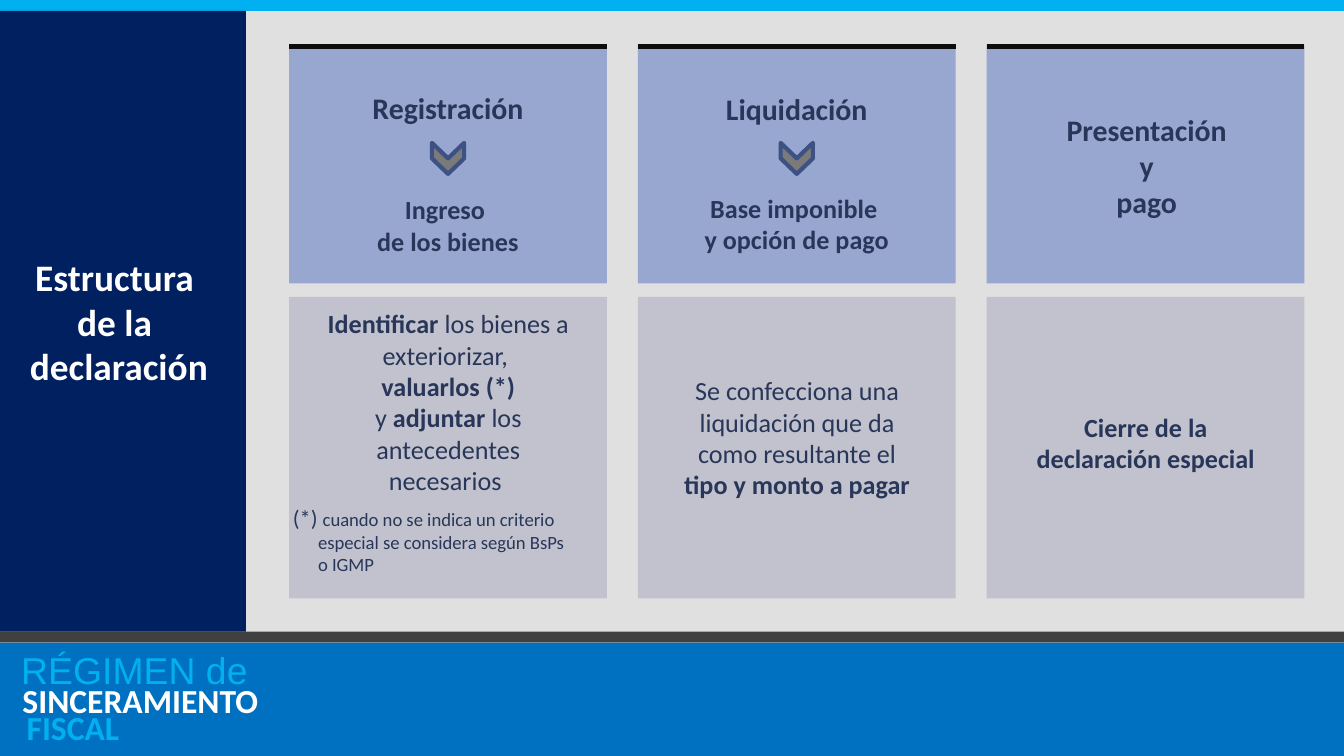
from pptx import Presentation
from pptx.dml.color import RGBColor
from pptx.enum import shapes, text
from pptx.oxml.ns import qn
from pptx.util import Pt
from lxml import etree

WHITE = RGBColor(0xFF, 0xFF, 0xFF)
GRAY = RGBColor(0xD9, 0xD9, 0xD9)
DARK_GRAY = RGBColor(0x40, 0x40, 0x40)
BLUE = RGBColor(0x00, 0x70, 0xC0)
SKY = RGBColor(0x00, 0xB0, 0xF0)
NAVY = RGBColor(0x00, 0x20, 0x60)
HEADER_FILL = RGBColor(0x97, 0xA7, 0xD0)
BODY_FILL = RGBColor(0xC1, 0xC2, 0xCD)
INK = RGBColor(0x28, 0x36, 0x59)
RULE = RGBColor(0x0D, 0x0D, 0x0D)
CHEVRON_FILL = RGBColor(0x7A, 0x7A, 0x7A)
CHEVRON_LINE = RGBColor(0x3D, 0x51, 0x85)

WIDTH, HEIGHT = 720, 405
COLUMN_LEFT, COLUMN_TOP, COLUMN_PITCH = 154.9, 24.2, 186.85
COLUMN_WIDTH, HEADER_HEIGHT = 170.2, 127.6
BODY_OFFSET, BODY_HEIGHT = 134.8, 161.6
CENTER = text.PP_ALIGN.CENTER


def add_block(slide, left, top, width, height, fill,
              kind=shapes.MSO_SHAPE.RECTANGLE):
    shape = slide.shapes.add_shape(kind, Pt(left), Pt(top), Pt(width), Pt(height))
    shape.shadow.inherit = False
    shape.fill.solid()
    shape.fill.fore_color.rgb = fill
    shape.line.fill.background()
    return shape


def add_text(slide, left, top, width, height, paragraphs, size,
             color=INK, bold=True, align=CENTER, font="Calibri"):
    """Each paragraph is a string or a list of (text, bold) runs."""
    box = slide.shapes.add_textbox(Pt(left), Pt(top), Pt(width), Pt(height))
    frame = box.text_frame
    frame.word_wrap = True
    for index, content in enumerate(paragraphs):
        paragraph = frame.paragraphs[0] if index == 0 else frame.add_paragraph()
        paragraph.alignment = align
        paragraph.font.size = Pt(size)
        paragraph.font.name = font
        paragraph.font.color.rgb = color
        if isinstance(content, str):
            paragraph.font.bold = bold
            paragraph.add_run().text = content
        else:
            for words, run_bold in content:
                run = paragraph.add_run()
                run.text = words
                run.font.bold = run_bold
    return frame.paragraphs


def add_background(slide):
    backdrop = add_block(slide, 0, 0, WIDTH, HEIGHT, GRAY)
    color = backdrop.fill._xPr.find(qn("a:solidFill"))[0]
    etree.SubElement(color, qn("a:alpha"), val="80000")
    add_block(slide, 0, 0, WIDTH, 5.8, SKY)


def add_footer(slide, top):
    add_block(slide, 0, top + 5.8, WIDTH, HEIGHT - top - 5.8, BLUE)
    add_block(slide, 0, top, WIDTH, 5.8, DARK_GRAY)
    left_align = text.PP_ALIGN.LEFT
    add_text(slide, 4.3, top + 5, 321, 31.5, ["RÉGIMEN de"], 20, SKY,
             False, left_align, "Arial")
    add_text(slide, 5, top + 22.3, 313, 29, ["SINCERAMIENTO"], 18, WHITE,
             align=left_align)
    add_text(slide, 7.2, top + 36.7, 129, 29, ["FISCAL"], 18, SKY,
             align=left_align)


def add_sidebar(slide, top, width, height):
    add_block(slide, 0, top, width, height, NAVY)
    add_text(slide, -9.4, top + 126.7, 146.2, 80,
             ["Estructura ", "de la ", "declaración"], 20, WHITE)


def add_column(slide, left, top):
    """Header card with a rule on top, and a body card below."""
    add_block(slide, left, top, COLUMN_WIDTH, HEADER_HEIGHT, HEADER_FILL)
    add_block(slide, left, top + BODY_OFFSET, COLUMN_WIDTH, BODY_HEIGHT, BODY_FILL)
    rule = slide.shapes.add_connector(
        shapes.MSO_CONNECTOR.STRAIGHT, Pt(left), Pt(top + 0.7),
        Pt(left + COLUMN_WIDTH), Pt(top + 0.7))
    rule.line.color.rgb = RULE
    rule.line.width = Pt(2.25)
    etree.SubElement(rule._element.spPr, qn("a:effectLst"))


def add_chevron(slide, left, top):
    chevron = add_block(slide, left + COLUMN_WIDTH / 2 - 8.3, top + 52, 16.6, 17.3,
                        CHEVRON_FILL, shapes.MSO_SHAPE.CHEVRON)
    chevron.rotation = 90
    chevron.line.color.rgb = CHEVRON_LINE
    chevron.line.width = Pt(2.25)


def add_registration(slide, left, top):
    add_column(slide, left, top)
    add_chevron(slide, left, top)
    heading = add_text(slide, left + 37.2, top + 20.3, 95.8, 97,
                       ["Registración", "Ingreso ", "de los bienes"], 16)
    heading[1].space_before = Pt(36.6)
    for paragraph in heading[1:]:
        paragraph.font.size = Pt(14)
    add_text(slide, left + 12.2, top + 137, 146.2, 109, [
        [("Identificar", True), (" los bienes a exteriorizar, ", False)],
        "valuarlos (*)",
        [("y ", False), ("adjuntar ", True),
         ("los antecedentes necesarios ", False)]], 14)
    note = add_text(slide, left - 5.1, top + 242.2, 185.8, 46, [
        [("(*) ", False), ("cuando no se indica un criterio", False)],
        "especial se considera según BsPs", "o IGMP"],
        10, bold=False, align=text.PP_ALIGN.LEFT)
    note[0].runs[0].font.size = Pt(12)
    for paragraph in note[1:]:
        paragraph._p.get_or_add_pPr().set("marL", str(Pt(13.5)))


def add_settlement(slide, left, top):
    add_column(slide, left, top)
    add_chevron(slide, left, top)
    add_text(slide, left + 37.2, top + 21.1, 95.8, 26.6, ["Liquidación"], 16)
    add_text(slide, left + 16, top + 75.1, 138.2, 41,
             ["Base imponible ", "y opción de pago"], 14)
    add_text(slide, left + 12.2, top + 173, 146.2, 86, [
        [("Se confecciona una liquidación que da como resultante el ", False),
         ("tipo y monto a pagar", True)]], 14)


def add_payment(slide, left, top):
    add_column(slide, left, top)
    add_text(slide, left + 34.6, top + 32, 102.2, 65.5,
             ["Presentación ", "y", "pago"], 16)
    add_text(slide, left + 12.2, top + 192.5, 146.2, 41,
             ["Cierre de la declaración especial"], 14)


def main():
    presentation = Presentation()
    presentation.slide_width = Pt(WIDTH)
    presentation.slide_height = Pt(HEIGHT)
    slide = presentation.slides.add_slide(presentation.slide_layouts[6])
    add_background(slide)
    add_footer(slide, 338.4)
    add_sidebar(slide, 5.8, 131.8, 332.6)
    for index, add_step in enumerate((add_registration, add_settlement, add_payment)):
        add_step(slide, COLUMN_LEFT + index * COLUMN_PITCH, COLUMN_TOP)
    presentation.save("out.pptx")


if __name__ == "__main__":
    main()
